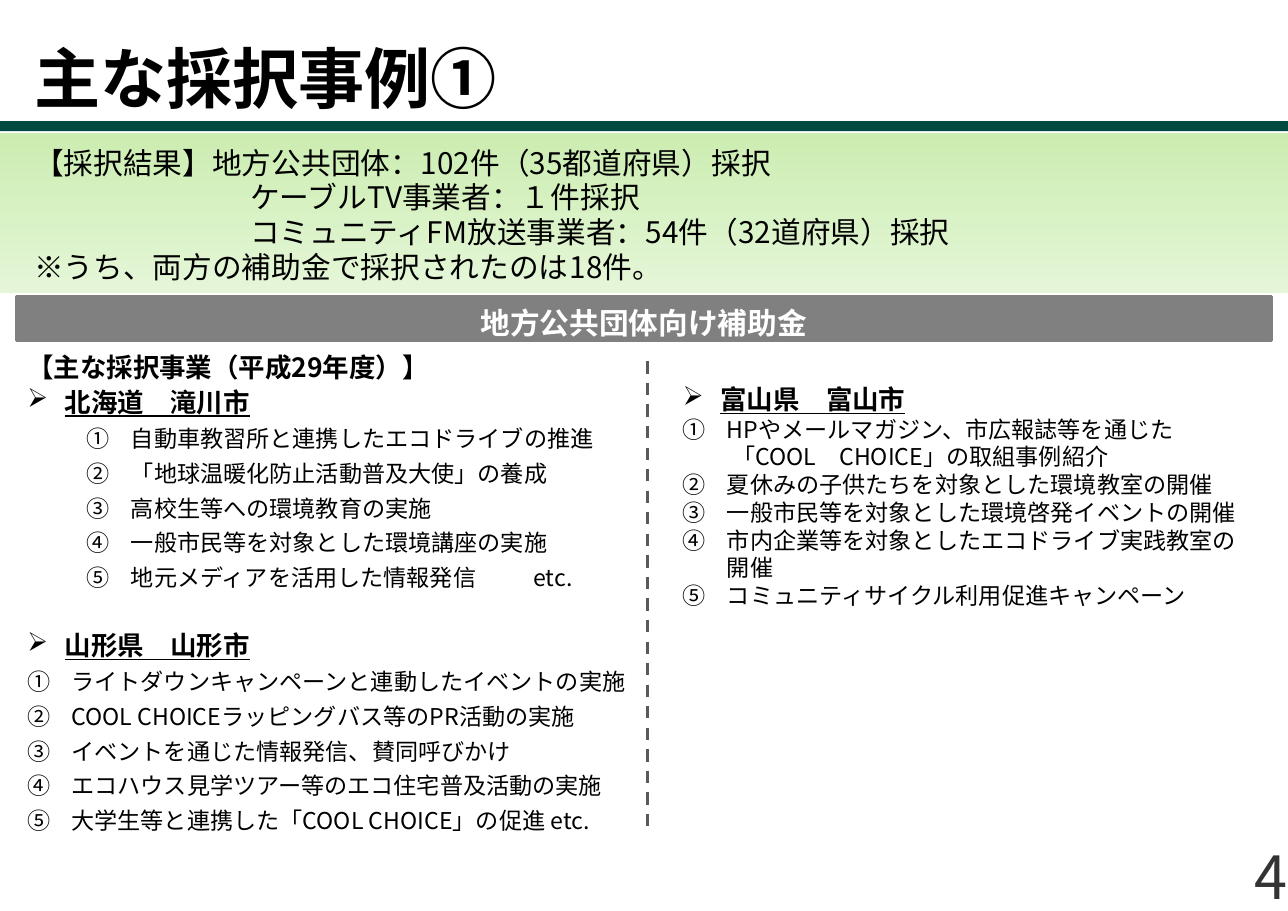
"""Build the slide on the main adopted subsidy cases."""
from dataclasses import dataclass

from lxml import etree
from pptx import Presentation, util as u
from pptx.dml.color import RGBColor
from pptx.enum import dml, shapes, text
from pptx.oxml import ns

FONT = "Noto Sans CJK JP"
BLACK = RGBColor(0x00, 0x00, 0x00)
WHITE = RGBColor(0xFF, 0xFF, 0xFF)
GREEN = RGBColor(0x00, 0x4A, 0x41)
LIME = RGBColor(0xCC, 0xED, 0xB1)
PALE = RGBColor(0xE5, 0xF6, 0xD8)
GRAY = RGBColor(0x80, 0x80, 0x80)
DARK = RGBColor(0x33, 0x33, 0x33)
DASH = RGBColor(0x59, 0x59, 0x59)
WIDE, HIGH = 11.69, 8.27
HEAD, BODY, LEAD = 17.3, 15.1, 22.7


@dataclass
class Box:
    """Place of an object in inches."""
    x: float
    y: float
    w: float
    h: float

    def area(self) -> tuple:
        """Give the place as lengths."""
        return tuple(u.Inches(v) for v in (self.x, self.y, self.w, self.h))


@dataclass
class Case:
    """A city, its projects and their layout."""
    city: str
    works: list[str]
    left: float = 0.4
    level: int = 0
    lead: float | None = None
    before: float = 0
    tab: float = 0


RESULTS = [
    ("【採択結果】地方公共団体：102件（35都道府県）採択", 0),
    ("ケーブルTV事業者：１件採択", 1.96),
    ("コミュニティFM放送事業者：54件（32道府県）採択", 1.96),
    ("※うち、両方の補助金で採択されたのは18件。", 0),
]
NORTH = Case("北海道　滝川市", [
    "自動車教習所と連携したエコドライブの推進",
    "「地球温暖化防止活動普及大使」の養成",
    "高校生等への環境教育の実施",
    "一般市民等を対象とした環境講座の実施",
    "地元メディアを活用した情報発信\tetc.",
], left=0.94, level=1, lead=LEAD, tab=4.76)
EAST = Case("山形県　山形市", [
    "ライトダウンキャンペーンと連動したイベントの実施",
    "COOL CHOICEラッピングバス等のPR活動の実施",
    "イベントを通じた情報発信、賛同呼びかけ",
    "エコハウス見学ツアー等のエコ住宅普及活動の実施",
    "大学生等と連携した「COOL CHOICE」の促進 etc.",
], lead=LEAD, before=LEAD)
WEST = Case("富山県　富山市", [
    "HPやメールマガジン、市広報誌等を通じた\n 「COOL　CHOICE」の取組事例紹介",
    "夏休みの子供たちを対象とした環境教室の開催",
    "一般市民等を対象とした環境啓発イベントの開催",
    "市内企業等を対象としたエコドライブ実践教室の\n開催",
    "コミュニティサイクル利用促進キャンペーン",
])


def node(home, tag: str, **attrs: str):
    """Add a drawing element to its home."""
    return etree.SubElement(home, ns.qn(tag), attrs)


def write(frame, words: str, *, size: float, color=BLACK, bold=False, line=False,
          align=text.PP_ALIGN.LEFT, lead=None, before=0, after=0, left=0, hang=0,
          level=0, mark="", tab=0) -> None:
    """Write one paragraph, using the first one while it is empty."""
    para = frame.paragraphs[0]
    if para.runs:
        para = frame.add_paragraph()
    para.alignment, para.level = align, level
    para.space_before, para.space_after = u.Pt(before), u.Pt(after)
    if lead:
        para.line_spacing = u.Pt(lead)
    props = para._p.get_or_add_pPr()
    props.set("marL", str(u.Inches(left)))
    props.set("indent", str(u.Inches(-hang)))
    if mark == "number":
        node(props, "a:buAutoNum", type="circleNumDbPlain")
    elif mark:
        node(props, "a:buChar", char=mark)
    else:
        node(props, "a:buNone")
    if tab:
        stops = node(props, "a:tabLst")
        node(stops, "a:tab", pos=str(u.Inches(tab)), algn="l")
    for i, part in enumerate(words.split("\n")):
        if i:
            para.add_line_break()
        run = para.add_run()
        run.text = part
        font = run.font
        font.name, font.size = FONT, u.Pt(size)
        font.bold, font.underline = bold, line
        font.color.rgb = color
        node(run._r.get_or_add_rPr(), "a:ea", typeface=FONT)


def setup(shape, pads=(0.1, 0.05, 0.1, 0.05), anchor=text.MSO_ANCHOR.TOP):
    """Set margins and anchor, and return the text frame."""
    frame = shape.text_frame
    frame.word_wrap = True
    frame.vertical_anchor = anchor
    (frame.margin_left, frame.margin_top,
     frame.margin_right, frame.margin_bottom) = map(u.Inches, pads)
    return frame


def panel(slide, box: Box, color=None):
    """Draw a plain rectangle, filled if a colour is given."""
    shape = slide.shapes.add_shape(shapes.MSO_SHAPE.RECTANGLE, *box.area())
    shape.shadow.inherit = False
    shape.line.fill.background()
    if color is not None:
        shape.fill.solid()
        shape.fill.fore_color.rgb = color
    return shape


def label(slide, box: Box, **form):
    """Add a text box and return its frame."""
    return setup(slide.shapes.add_textbox(*box.area()), **form)


def cases(frame, case: Case) -> None:
    """Write a city heading and its numbered projects."""
    write(frame, case.city, size=HEAD, bold=True, line=True, lead=case.lead,
          before=case.before, left=0.34, hang=0.34, mark="➢")
    for work in case.works:
        write(frame, work, size=BODY, lead=case.lead, left=case.left, hang=0.4,
              level=case.level, mark="number", tab=case.tab if "\t" in work else 0)


def results(slide) -> None:
    """Draw the green panel of results."""
    shape = panel(slide, Box(0, 1.21, WIDE, 1.45))
    shape.fill.gradient()
    shape.fill.gradient_angle = 270
    for stop, color, spot in zip(shape.fill.gradient_stops, (LIME, PALE), (0, 1)):
        stop.color.rgb = color
        stop.position = spot
    frame = setup(shape, pads=(0.31, 0.2, 0.31, 0.2))
    for words, left in RESULTS:
        write(frame, words, size=19.4, lead=16.2, after=6.5, left=left)


def split(slide) -> None:
    """Draw the dashed line between the columns."""
    x, top, end = map(u.Inches, (5.88, 3.28, 7.53))
    rule = slide.shapes.add_connector(shapes.MSO_CONNECTOR.STRAIGHT, x, top, x, end)
    rule.line.color.rgb = DASH
    rule.line.width = u.Pt(2)
    rule.line.dash_style = dml.MSO_LINE.DASH
    node(rule._element.spPr, "a:effectLst")


def main() -> None:
    """Build and save the slide."""
    deck = Presentation()
    deck.slide_width, deck.slide_height = u.Inches(WIDE), u.Inches(HIGH)
    slide = deck.slides.add_slide(deck.slide_layouts[6])
    low = text.MSO_ANCHOR.BOTTOM

    page = label(slide, Box(10.18, 7.78, 1.51, 0.49), pads=(0, 0, 0, 0), anchor=low)
    write(page, "4", size=38.9, color=DARK, align=text.PP_ALIGN.RIGHT)
    panel(slide, Box(0, 1.1, WIDE, 0.09), GREEN)
    title = label(slide, Box(0, 0, WIDE, 1.1), pads=(0.31, 0, 0.31, 0.04), anchor=low)
    write(title, "主な採択事例①", size=43.2, bold=True)
    results(slide)

    bar = panel(slide, Box(0.15, 2.69, 11.39, 0.4), GRAY)
    bar.line.color.rgb = GRAY
    bar.line.width = u.Pt(2)
    frame = setup(bar, pads=(0.1, 0.13, 0.1, 0.05), anchor=text.MSO_ANCHOR.MIDDLE)
    write(frame, "地方公共団体向け補助金", size=19.4, color=WHITE, bold=True,
          align=text.PP_ALIGN.CENTER)

    frame = label(slide, Box(0.15, 3.11, 5.73, 4.62))
    write(frame, "【主な採択事業（平成29年度）】", size=HEAD, bold=True, lead=LEAD)
    cases(frame, NORTH)
    cases(frame, EAST)
    cases(label(slide, Box(6.1, 3.22, 5.44, 2.39), pads=(0.1, 0.26, 0.1, 0.05)), WEST)
    split(slide)
    deck.save("out.pptx")


if __name__ == "__main__":
    main()
